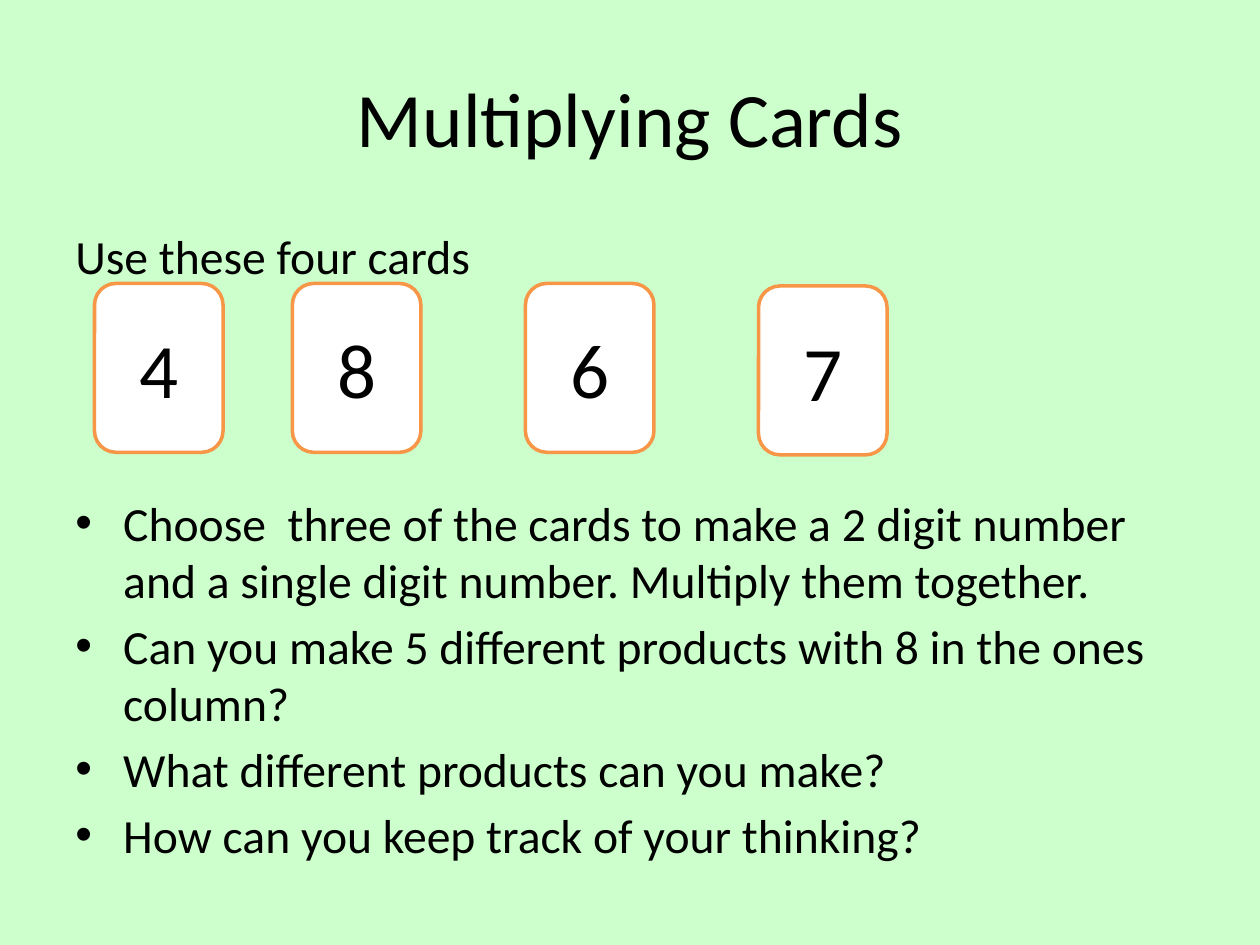
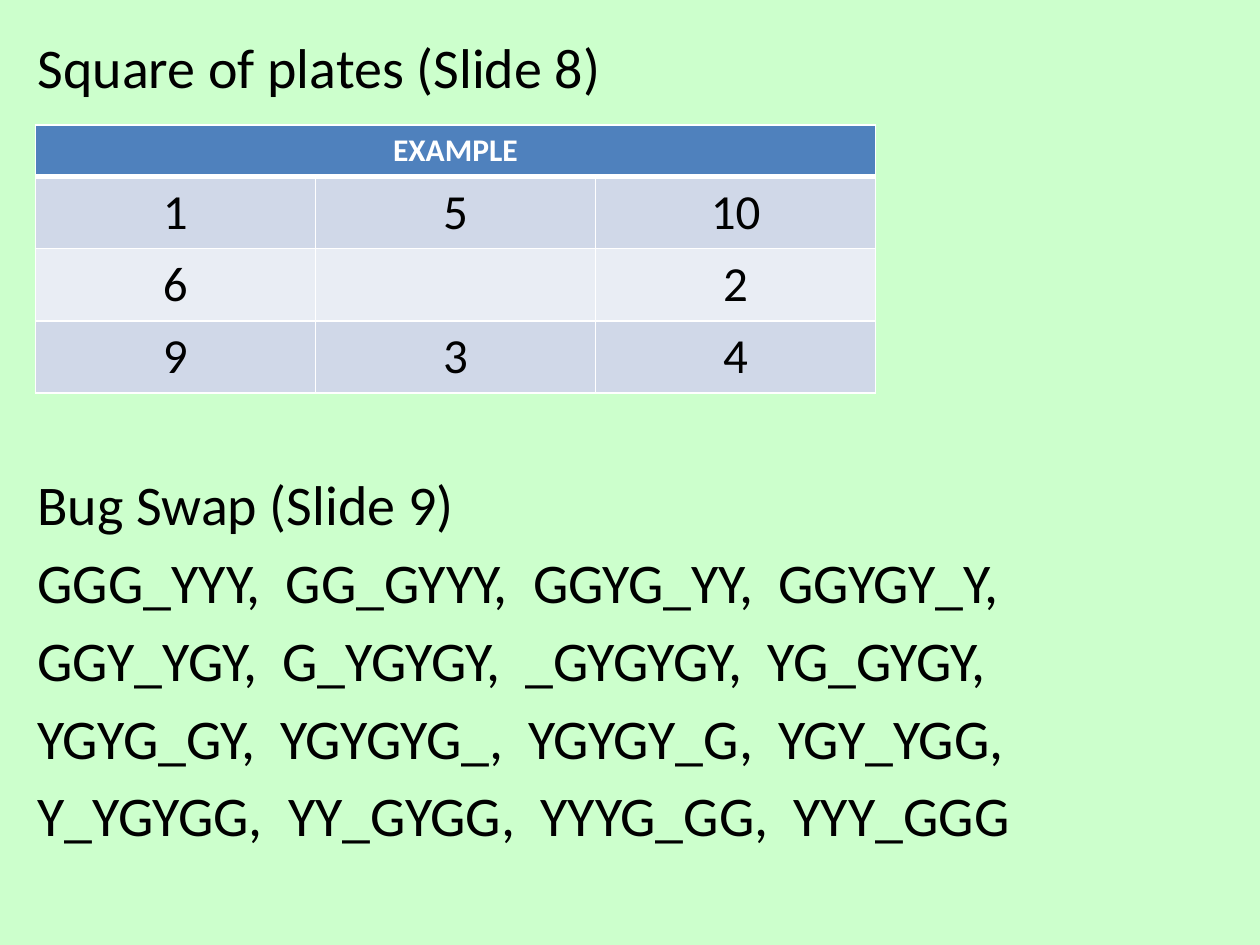
from lxml.etree import SubElement
from pptx import Presentation
from pptx.dml.color import RGBColor
from pptx.enum.shapes import MSO_SHAPE
from pptx.enum.text import MSO_ANCHOR, PP_ALIGN
from pptx.oxml.ns import qn
from pptx.util import Inches, Pt

FONT = "Calibri"
COLOURS = {
    "page": "CCFFCC",
    "text": "000000",
    "white": "FFFFFF",
    "card_edge": "F79646",
    "header": "4F81BD",
    "odd_row": "D0D8E8",
    "even_row": "E9EDF4",
}
CARDS = [("4", 0.25, 0.5), ("8", 1.82, 0.5), ("6", 3.67, 0.5), ("7", 5.52, 0.52)]
CARD_TASKS = [
    "Choose  three of the cards to make a 2 digit number and a single digit number. "
    "Multiply them together.",
    "Can you make 5 different products with 8 in the ones column?",
    "What different products can you make?",
    "How can you keep track of your thinking?",
]
PLATES = [["1", "5", "10"], ["6", "", "2"], ["9", "3", "4"]]
BUG_SWAP = [
    "Bug Swap (Slide 9)",
    "GGG_YYY,  GG_GYYY,  GGYG_YY,  GGYGY_Y,",
    "GGY_YGY,  G_YGYGY,  _GYGYGY,  YG_GYGY,",
    "YGYG_GY,  YGYGYG_,  YGYGY_G,  YGY_YGG,",
    "Y_YGYGG,  YY_GYGG,  YYYG_GG,  YYY_GGG",
]


def colour(name):
    """Return the named colour."""
    return RGBColor.from_string(COLOURS[name])


def paint(fill, name):
    """Make a fill solid in the named colour."""
    fill.solid()
    fill.fore_color.rgb = colour(name)


def write(para, text, size, ink="text", bold=False, align=PP_ALIGN.LEFT):
    """Add one formatted run to a paragraph."""
    para.alignment = align
    span = para.add_run()
    span.text = text
    span.font.name = FONT
    span.font.size = Pt(size)
    span.font.bold = bold
    span.font.color.rgb = colour(ink)


def add_bullet(para, indent):
    """Give a paragraph a hanging round bullet."""
    props = para._p.get_or_add_pPr()
    props.set("marL", str(Inches(indent)))
    props.set("indent", str(-Inches(indent)))
    SubElement(props, qn("a:buFont"), typeface="Arial")
    SubElement(props, qn("a:buChar"), char="•")


def add_text(page, box, lines, size, gap):
    """Add a wrapped text box with one paragraph per line."""
    frame = page.shapes.add_textbox(*map(Inches, box)).text_frame
    frame.word_wrap = True
    for number, line in enumerate(lines):
        para = frame.add_paragraph() if number else frame.paragraphs[0]
        if number:
            para.space_before = Pt(gap)
        write(para, line, size)
    return frame


def add_title(page, box, text):
    """Place and format the title placeholder."""
    title = page.shapes.title
    title.left, title.top, title.width, title.height = map(Inches, box)
    title.text_frame.vertical_anchor = MSO_ANCHOR.MIDDLE
    write(title.text_frame.paragraphs[0], text, 44, align=PP_ALIGN.CENTER)


def add_card(page, box, digit):
    """Draw one rounded number card."""
    card = page.shapes.add_shape(MSO_SHAPE.ROUNDED_RECTANGLE, *map(Inches, box))
    card.shadow.inherit = False
    paint(card.fill, "white")
    card.line.color.rgb = colour("card_edge")
    card.line.width = Pt(2)
    card.text_frame.vertical_anchor = MSO_ANCHOR.MIDDLE
    write(card.text_frame.paragraphs[0], digit, 44, align=PP_ALIGN.CENTER)


def add_card_task(page, box):
    """Add the instruction, the four cards and the bulleted questions."""
    left, top = box[:2]
    frame = add_text(page, box, ["Use these four cards"] + CARD_TASKS, 27.2, 5)
    questions = frame.paragraphs[1:]
    questions[0].space_before = Pt(120)
    for para in questions:
        add_bullet(para, 0.38)
    for digit, across, down in CARDS:
        add_card(page, (left + across, top + down, 1.02, 1.34), digit)


def set_borders(cell, bottom):
    """Draw white borders round a cell, with a chosen bottom width."""
    props = cell._tc.get_or_add_tcPr()
    for place, (side, width) in enumerate(zip("LRTB", (1, 1, 1, bottom))):
        edge = props.makeelement(qn(f"a:ln{side}"), {"w": str(Pt(width))})
        fill = SubElement(edge, qn("a:solidFill"))
        SubElement(fill, qn("a:srgbClr"), val=COLOURS["white"])
        props.insert(place, edge)


def fill_cell(cell, text, size, back, ink="text", bold=False, bottom=1):
    """Fill, border and write one table cell."""
    paint(cell.fill, back)
    set_borders(cell, bottom)
    if text:
        write(cell.text_frame.paragraphs[0], text, size, ink, bold, PP_ALIGN.CENTER)


def add_plates(page, box):
    """Add the square of plates under its merged heading."""
    header_height = 0.41
    table = page.shapes.add_table(len(PLATES) + 1, 3, *map(Inches, box)).table
    for column in table.columns:
        column.width = Inches(box[2] / 3)
    for row in table.rows:
        row.height = Inches((box[3] - header_height) / len(PLATES))
    table.rows[0].height = Inches(header_height)
    table.cell(0, 0).merge(table.cell(0, 2))
    for column in range(3):
        heading = "" if column else "EXAMPLE"
        fill_cell(table.cell(0, column), heading, 18, "header", "white", True, 3)
    for number, values in enumerate(PLATES, 1):
        back = "odd_row" if number % 2 else "even_row"
        for column, value in enumerate(values):
            fill_cell(table.cell(number, column), value, 28, back)


def build_cards_page(deck):
    """Build the multiplying cards slide."""
    page = deck.slides.add_slide(deck.slide_layouts[5])
    add_title(page, (0.5, 0.3, 9, 1.25), "Multiplying Cards")
    add_card_task(page, (0.5, 1.75, 9, 4.95))


def build_answers_page(deck):
    """Build the slide of example answers."""
    page = deck.slides.add_slide(deck.slide_layouts[6])
    add_text(page, (0.2, 0.21, 9.6, 0.7), ["Square of plates (Slide 8)"], 32, 6)
    add_plates(page, (0.28, 0.99, 6.67, 2.13))
    add_text(page, (0.2, 3.68, 9.6, 3.31), BUG_SWAP, 32, 6)


def main():
    """Build and save the deck."""
    deck = Presentation()
    deck.slide_width, deck.slide_height = Inches(10), Inches(7.5)
    paint(deck.slide_master.background.fill, "page")
    build_cards_page(deck)
    build_answers_page(deck)
    deck.save("out.pptx")


if __name__ == "__main__":
    main()
